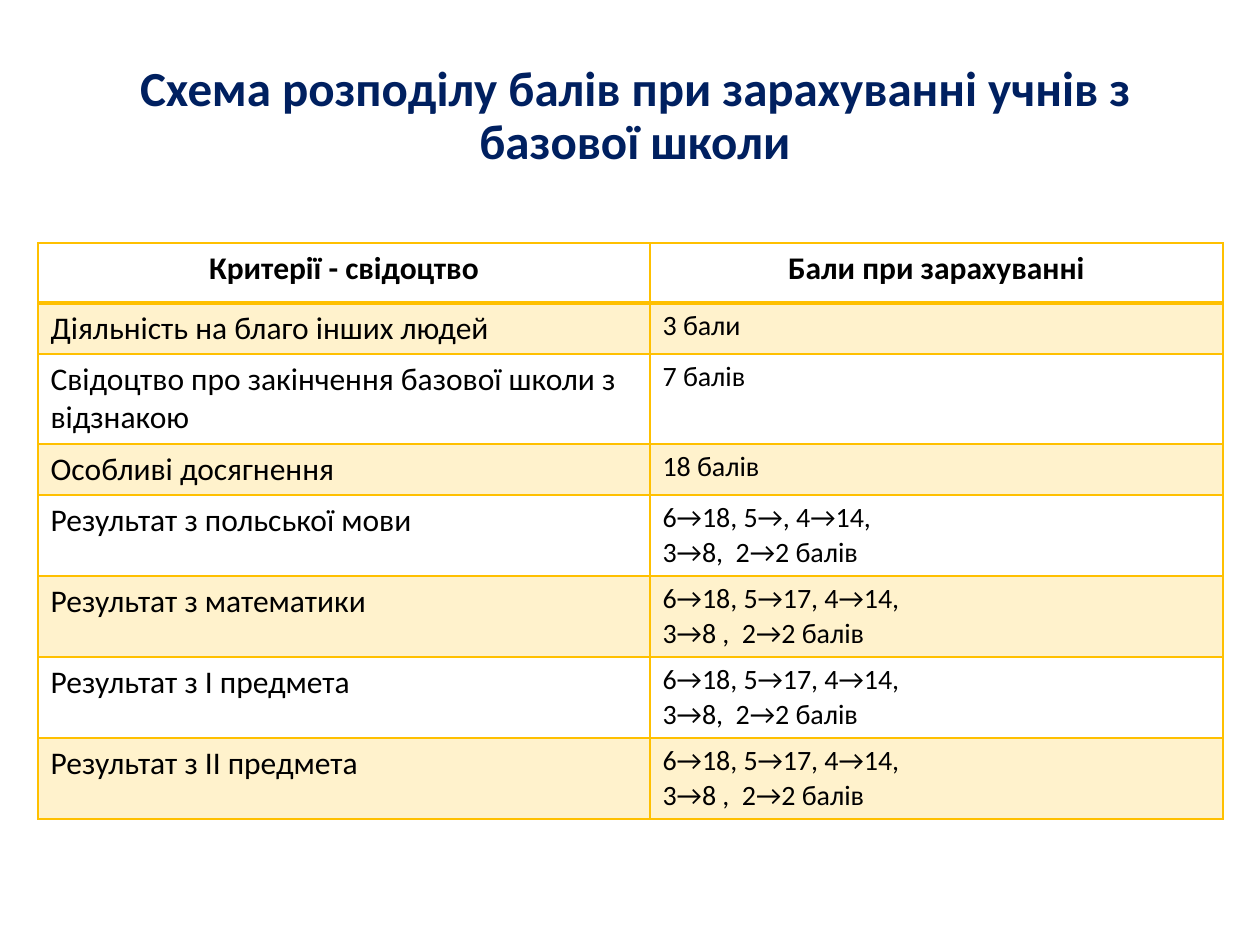
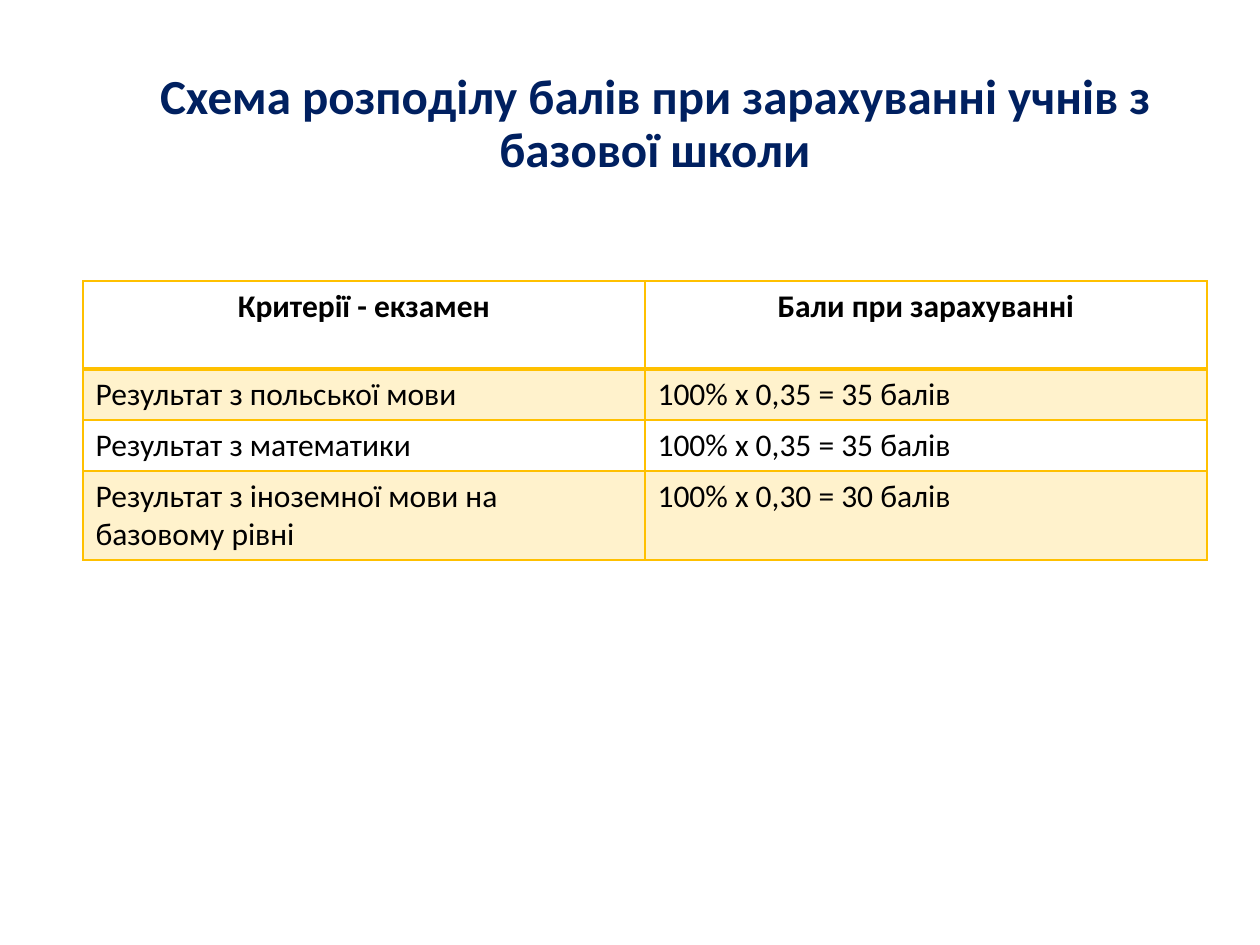
from lxml import etree
from pptx import Presentation
from pptx.dml.color import RGBColor
from pptx.enum.text import MSO_ANCHOR, PP_ALIGN
from pptx.oxml.ns import qn
from pptx.util import Pt

PX = 914400 / 126
FONT = "Calibri"
NAVY = RGBColor(0x00, 0x20, 0x60)
GOLD = RGBColor(0xFF, 0xC0, 0x00)
BLACK = RGBColor(0x00, 0x00, 0x00)
CENTER, LEFT = PP_ALIGN.CENTER, PP_ALIGN.LEFT
MIDDLE = MSO_ANCHOR.MIDDLE
TINT = 20000  # opacity of the row bands, in thousandths of a percent

TITLE = "Схема розподілу балів при зарахуванні учнів з базової школи"
POINTS = "Бали при зарахуванні"
POLISH = "Результат з польської мови"
MATHS = "Результат з математики"

GRADES = [
    ("Критерії - свідоцтво", POINTS),
    ("Діяльність на благо інших людей", "3 бали"),
    ("Свідоцтво про закінчення базової школи з відзнакою", "7 балів"),
    ("Особливі досягнення", "18 балів"),
    (POLISH, "6→18, 5→, 4→14,\v3→8,  2→2 балів"),
    (MATHS, "6→18, 5→17, 4→14,\v3→8 ,  2→2 балів"),
    ("Результат з І предмета", "6→18, 5→17, 4→14,\v3→8,  2→2 балів"),
    ("Результат з ІІ предмета", "6→18, 5→17, 4→14,\v3→8 ,  2→2 балів"),
]
EXAMS = [
    ("Критерії - екзамен", POINTS),
    (POLISH, "100% x 0,35 = 35 балів"),
    (MATHS, "100% x 0,35 = 35 балів"),
    ("Результат з іноземної мови на базовому рівні", "100% x 0,30 = 30 балів"),
]


def px(*sizes):
    return [round(size * PX) for size in sizes]


def style(frame, size, color, bold, align):
    for para in frame.paragraphs:
        para.alignment = align
        for run in para.runs:
            font = run.font
            font.name, font.size, font.bold = FONT, Pt(size), bold
            font.color.rgb = color


def add_title(slide, left, top):
    frame = slide.shapes.add_textbox(*px(left, top, 1124, 136)).text_frame
    frame.word_wrap = True
    frame.vertical_anchor = MIDDLE
    frame.text = TITLE
    style(frame, 28, NAVY, True, CENTER)
    frame.paragraphs[0].line_spacing = 0.9


def add_edge(cell, side, width):
    props = cell._tc.get_or_add_tcPr()
    line = etree.SubElement(props, qn(f"a:ln{side}"), w=str(Pt(width)))
    fill = etree.SubElement(line, qn("a:solidFill"))
    etree.SubElement(fill, qn("a:srgbClr"), val=str(GOLD))


def paint(cell, band):
    """Fill a cell with the pale band, or leave it clear."""
    if not band:
        cell.fill.background()
        return
    cell.fill.solid()
    cell.fill.fore_color.rgb = GOLD
    color = cell._tc.tcPr.find(f".//{qn('a:solidFill')}[last()]/{qn('a:srgbClr')}")
    for color in cell._tc.tcPr.findall(f"{qn('a:solidFill')}/{qn('a:srgbClr')}"):
        etree.SubElement(color, qn("a:alpha"), val=str(TINT))


def set_cell(cell, text, row, size):
    head = row == 0
    cell.text_frame.text = text
    style(cell.text_frame, size, BLACK, head, CENTER if head else LEFT)
    for side in "LRTB":
        thick = (head and side == "B") or (row == 1 and side == "T")
        add_edge(cell, side, 2 if thick else 1)
    paint(cell, row % 2 == 1)


def add_grid(slide, left, top, widths, heights, rows, size):
    """Add a table of criteria; size is that of the points in the body."""
    box = px(left, top, sum(widths), sum(heights))
    table = slide.shapes.add_table(len(rows), len(widths), *box).table
    table.first_row = table.horz_banding = False
    for col, width in zip(table.columns, px(*widths)):
        col.width = width
    for line, height in zip(table.rows, px(*heights)):
        line.height = height
    for r, texts in enumerate(rows):
        for c, text in enumerate(texts):
            set_cell(table.cell(r, c), text, r, size if r and c else 18)


def main():
    deck = Presentation()
    deck.slide_width, deck.slide_height = px(1260, 945)
    blank = deck.slide_layouts[6]

    grades = deck.slides.add_slide(blank)
    add_title(grades, 73, 49)
    add_grid(grades, 38, 243, [612, 573], [60, 51, 90, 51] + [81] * 4, GRADES, 16)

    exams = deck.slides.add_slide(blank)
    add_title(exams, 93, 57)
    add_grid(exams, 83, 281, [562, 562], [88, 51, 51, 89], EXAMS, 18)

    deck.save("out.pptx")


if __name__ == "__main__":
    main()
